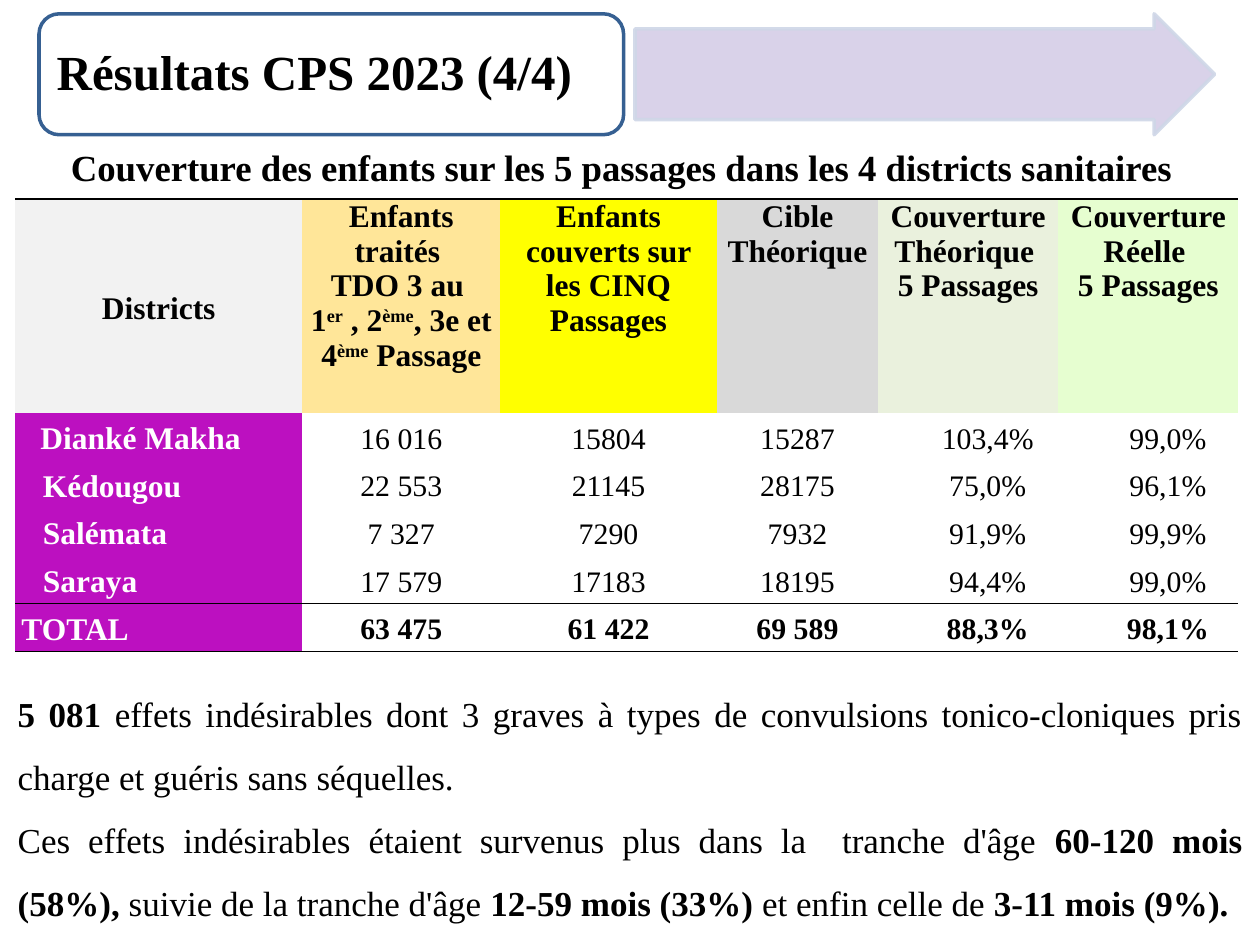
from lxml.etree import SubElement
from pptx import Presentation
from pptx.dml.color import RGBColor
from pptx.enum.shapes import MSO_SHAPE as Preset
from pptx.enum.text import MSO_ANCHOR as Anchor, MSO_AUTO_SIZE as AutoSize, PP_ALIGN as Align
from pptx.oxml import parse_xml
from pptx.oxml.ns import nsdecls, qn
from pptx.util import Inches, Pt

color = RGBColor.from_string
prs = Presentation()
prs.slide_width, prs.slide_height = Inches(10), Inches(7.5)
UNIT = prs.slide_width / 100  # the slide is a grid of 100 columns by 75 rows
slide = prs.slides.add_slide(prs.slide_layouts[1])
shapes = slide.shapes


def place(shape, *box):
    """Set left, top, width and height in grid units."""
    for side, units in zip(("left", "top", "width", "height"), box):
        setattr(shape, side, round(units * UNIT))


def write(paragraph, text, size, bold=False, ink="000000", accent=None, indent=0, **layout):
    """Add runs to a paragraph; parts between bars take the accent attributes."""
    for name, value in layout.items():
        setattr(paragraph, name, value)
    if indent:
        paragraph._p.get_or_add_pPr().set("indent", str(Inches(indent)))
    for i, part in enumerate(text.split("|")):
        if not part:
            continue
        run = paragraph.add_run()
        run.text = part
        for name, value in {"name": "Times New Roman", "size": Pt(size), "bold": bold}.items():
            setattr(run.font, name, value)
        run.font.color.rgb = color(ink)
        if i % 2:
            for name, value in accent.items():
                run._r.get_or_add_rPr().set(name, value)


# Title banner
banner = [
    (Preset.RIGHT_ARROW, (50.4, 1.1, 46, 9.6), (0.75, 0.5), "D9D2E9", "CFD7E7"),
    (Preset.ROUNDED_RECTANGLE, (3.1, 1.1, 46.4, 9.6), (0.167,), "FFFFFF", "366092"),
]
for preset, box, adjustments, fill, outline in banner:
    panel = shapes.add_shape(preset, 0, 0, 0, 0)
    place(panel, *box)
    for i, value in enumerate(adjustments):
        panel.adjustments[i] = value
    panel.shadow.inherit = False
    panel.fill.solid()
    panel.fill.fore_color.rgb = color(fill)
    panel.line.color.rgb = color(outline)
    panel.line.width = Pt(2)
    if preset == Preset.RIGHT_ARROW:
        SubElement(panel.line._ln.find(".//" + qn("a:srgbClr")), qn("a:alpha"), val="89000")

title, findings = shapes.title, slide.placeholders[1]
shapes._spTree.append(title._element)  # bring the title in front of its panel
place(title, 3.7, 1.6, 46.4, 8.7)
frame_format = {
    "margin_left": Inches(0.08), "margin_right": Inches(0.08),
    "margin_top": Inches(0.04), "margin_bottom": Inches(0.04),
    "vertical_anchor": Anchor.MIDDLE, "auto_size": AutoSize.NONE,
}
for name, value in frame_format.items():
    setattr(title.text_frame, name, value)
write(title.text_frame.paragraphs[0], "Résultats CPS 2023 (4/4)", 28, True,
      alignment=Align.LEFT, line_spacing=0.9)

# Findings under the table
place(findings, 0.4, 52.8, 99.2, 21)
findings.text_frame.auto_size = AutoSize.NONE
statements = [
    "|5 081 |effets indésirables dont 3 graves à types de convulsions tonico-cloniques "
    "pris charge et guéris sans séquelles.",
    "Ces effets indésirables étaient survenus plus dans la  tranche d'âge |60-120 mois (58%), |"
    "suivie de la tranche d'âge |12-59 mois (33%) |et enfin celle de |3-11 mois (9%).|",
]
for i, statement in enumerate(statements):
    paragraph = findings.text_frame.add_paragraph() if i else findings.text_frame.paragraphs[0]
    write(paragraph, statement, 20, accent={"b": "1"}, alignment=Align.JUSTIFY,
          line_spacing=1.5, space_before=Pt(0))
    properties = paragraph._p.get_or_add_pPr()
    for name in ("marL", "indent"):
        properties.set(name, "0")
    SubElement(properties, qn("a:buNone"))

# Table caption
caption = shapes.add_textbox(0, 0, 0, 0)
place(caption, 1.2, 11, 97, 4.5)
caption.text_frame.word_wrap = True
write(caption.text_frame.paragraphs[0],
      "Couverture des enfants sur les 5 passages dans les 4 districts sanitaires ",
      21, True, alignment=Align.CENTER)

# Coverage table
headings = [
    ("Districts", "F2F2F2"),
    ("Enfants traités \nTDO 3 au \n1|er| , 2|ème|, 3e et 4|ème| Passage", "FFE699"),
    ("Enfants couverts sur les CINQ Passages", "FFFF00"),
    ("Cible Théorique", "D9D9D9"),
    ("Couverture Théorique \n5 Passages", "EAF1DD"),
    ("Couverture Réelle \n5 Passages", "E6FED0"),
]
coverage = [
    ("Dianké Makha", "16 016", "15804", "15287", "103,4%", "99,0%"),
    ("Kédougou", "22 553", "21145", "28175", "75,0%", "96,1%"),
    ("Salémata", "7 327", "7290", "7932", "91,9%", "99,9%"),
    ("Saraya", "17 579", "17183", "18195", "94,4%", "99,0%"),
    ("TOTAL", "63 475", "61 422", "69 589", "88,3%", "98,1%"),
]
rows = [[text for text, _ in headings], *coverage]
TOTAL = len(rows) - 1
district_indents = [0, 0.15, 0.17, 0.17, 0.17, 0]
ruled_sides = {0: ["T"], TOTAL - 1: ["B"], TOTAL: ["T", "B"]}

table_frame = shapes.add_table(len(rows), len(headings), 0, 0, 0, 0)
place(table_frame, 1.2, 15.8, 97, 35.9)
table = table_frame.table
table.first_row = table.horz_banding = False
table._tbl.tblPr.find(qn("a:tableStyleId")).text = "{2D5ABB26-0587-4C30-8999-92F81FD0307C}"
for column, width in zip(table.columns, (22.8, 15.7, 17.2, 12.8, 14.3, 14.3)):
    column.width = round(width * UNIT)
for row, height in zip(table.rows, (17, 3.7, 3.8, 3.8, 3.8, 3.8)):
    row.height = round(height * UNIT)

cell_format = {"margin_left": Inches(0.05), "margin_right": Inches(0.05),
               "margin_top": 0, "margin_bottom": 0}
for r, texts in enumerate(rows):
    for c, text in enumerate(texts):
        cell = table.cell(r, c)
        for name, value in cell_format.items():
            setattr(cell, name, value)
        cell.vertical_anchor = Anchor.MIDDLE if r or not c else Anchor.TOP
        if r == 0:
            fill = headings[c][1]
            style = {"size": 18, "bold": True, "alignment": Align.CENTER,
                     "line_spacing": 1.0 if c else 1.15}
        elif c == 0:
            fill = "BC10C0"
            style = {"size": 18, "bold": True, "ink": "FFFFFF", "line_spacing": 1.15,
                     "indent": district_indents[r]}
        else:
            fill = "FFFFFF"
            style = {"size": 17, "bold": r == TOTAL, "alignment": Align.CENTER,
                     "line_spacing": 1.15, "space_after": Pt(10),
                     "indent": 0.31 if c >= 4 else 0}
        cell.fill.solid()
        cell.fill.fore_color.rgb = color(fill)
        for i, line in enumerate(text.split("\n")):
            paragraph = cell.text_frame.add_paragraph() if i else cell.text_frame.paragraphs[0]
            write(paragraph, line, accent={"baseline": "30000"}, **style)
        for i, side in enumerate(ruled_sides.get(r, [])):
            cell._tc.tcPr.insert(i, parse_xml(
                f'<a:ln{side} {nsdecls("a")} w="{Pt(1)}"><a:solidFill>'
                f'<a:srgbClr val="000000"/></a:solidFill></a:ln{side}>'))

prs.save("out.pptx")
